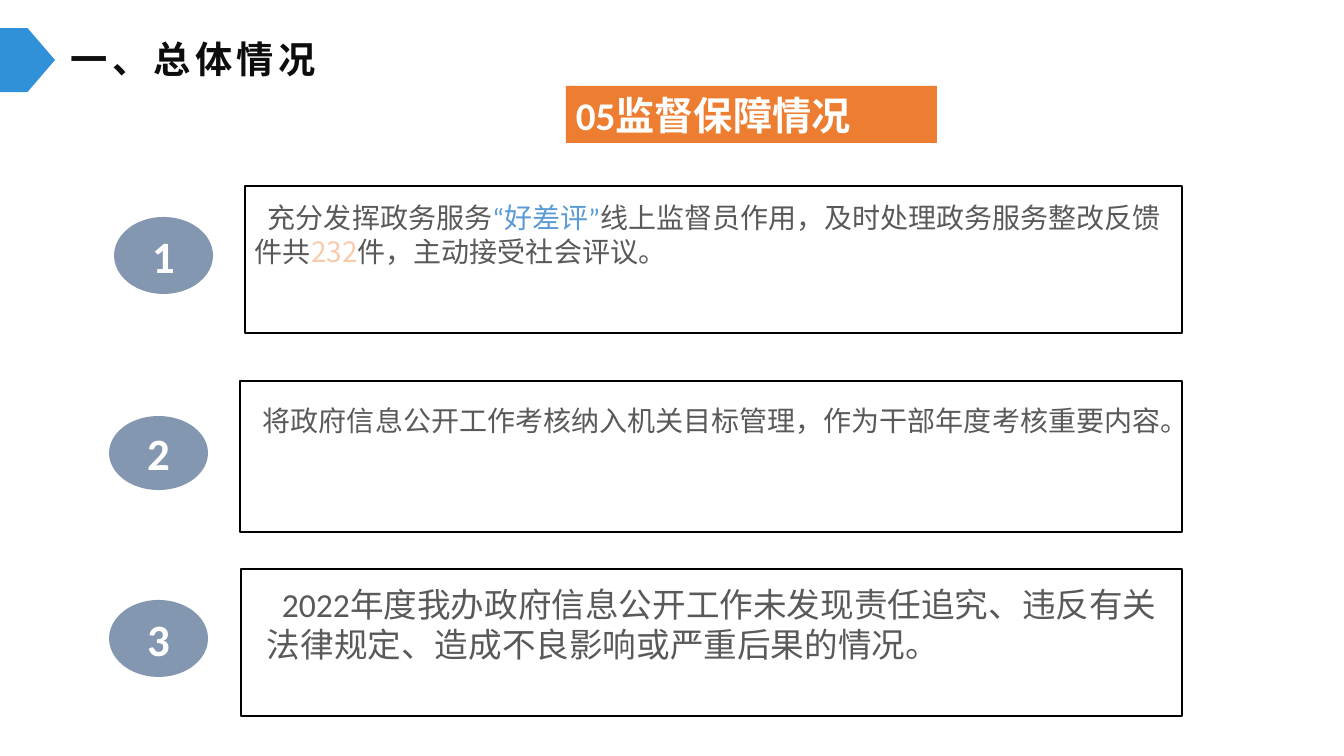
from dataclasses import dataclass

from pptx import Presentation
from pptx.dml.color import RGBColor
from pptx.enum.shapes import MSO_SHAPE
from pptx.enum.text import MSO_ANCHOR, PP_ALIGN
from pptx.oxml.ns import qn
from pptx.util import Pt

EMU_PER_PIXEL = 914400 / 100.8


@dataclass(frozen=True)
class Theme:
    body_font: str = "Calibri"
    accent_font: str = "Noto Sans CJK SC"
    white: str = "FFFFFF"
    black: str = "000000"
    title: str = "0D0D0D"
    tab: str = "3090D8"
    banner: str = "ED7D31"
    badge: str = "8497B0"
    body: str = "595959"
    praise: str = "5B9BD5"
    count: str = "F8CBAD"
    title_size: float = 26.6
    banner_size: int = 28
    badge_size: int = 32
    body_size: int = 20
    large_size: int = 24


THEME = Theme()


def px(length):
    return round(length * EMU_PER_PIXEL)


def add_block(page, kind, box, fill, line=None):
    block = page.shapes.add_shape(kind, *map(px, box))
    block.shadow.inherit = False
    block.fill.solid()
    block.fill.fore_color.rgb = RGBColor.from_string(fill)
    if line:
        block.line.color.rgb = RGBColor.from_string(line)
        block.line.width = Pt(2)
    else:
        block.line.fill.background()
    return block


def write(shape, spans, size, bold=False, align=PP_ALIGN.LEFT,
          anchor=MSO_ANCHOR.TOP, wrap=True):
    """Fill a shape with one paragraph of (text, colour, font) spans."""
    frame = shape.text_frame
    frame.word_wrap = wrap
    frame.vertical_anchor = anchor
    para = frame.paragraphs[0]
    para.alignment = align
    for text, colour, font in spans:
        span = para.add_run()
        span.text = text
        span.font.size = Pt(size)
        span.font.bold = bold
        span.font.name = font
        span.font.color.rgb = RGBColor.from_string(colour)
        properties = span.font._element
        east_asian = properties.makeelement(qn("a:ea"), {"typeface": font})
        properties.find(qn("a:latin")).addnext(east_asian)
    return para


def add_header(page, box):
    left, top, width, height = box
    # Pointed tab at the slide edge
    add_block(page, MSO_SHAPE.PENTAGON, (left, top, 55, height), THEME.tab)
    # Section title
    title = page.shapes.add_textbox(
        *map(px, (left + 61, top + 3, width - 61, 55)))
    para = write(title, [("一、总体情况", THEME.title, THEME.accent_font)],
                 THEME.title_size, bold=True, wrap=False)
    para.runs[0].font._element.set("spc", "300")


def add_banner(page, box):
    banner = add_block(page, MSO_SHAPE.RECTANGLE, box, THEME.banner)
    write(banner, [("05监督保障情况", THEME.white, THEME.body_font)],
          THEME.banner_size, bold=True)


def add_item(page, box, number, badge_box, text_box, spans, size, indent):
    """Place a framed statement; badge and text offsets are from the frame."""
    left, top = box[:2]
    # Frame
    add_block(page, MSO_SHAPE.RECTANGLE, box, THEME.white, THEME.black)
    # Numbered badge
    across, down, width, height = badge_box
    badge = add_block(page, MSO_SHAPE.OVAL,
                      (left + across, top + down, width, height), THEME.badge)
    write(badge, [(str(number), THEME.white, THEME.body_font)],
          THEME.badge_size, bold=True, align=PP_ALIGN.CENTER,
          anchor=MSO_ANCHOR.MIDDLE)
    # Statement
    across, down, width, height = text_box
    statement = page.shapes.add_textbox(
        *map(px, (left + across, top + down, width, height)))
    para = write(statement, spans, size)
    para.space_after = Pt(6)
    para._p.get_or_add_pPr().set("indent", str(px(indent)))


def plain(text):
    return text, THEME.body, THEME.body_font


# Frame, badge, text box, spans, type size, first-line indent
ITEMS = [
    ((245, 186, 937, 147), (-131, 31, 99, 77), (0, 10, 936, 77),
     [plain("充分发挥政务服务"),
      ("“好差评”", THEME.praise, THEME.body_font),
      plain("线上监督员作用，及时处理政务服务整改反馈件共"),
      ("232", THEME.count, THEME.accent_font),
      plain("件，主动接受社会评议。")],
     THEME.body_size, 13),
    ((240, 381, 942, 151), (-131, 35, 99, 74), (7, 18, 936, 44),
     [plain("将政府信息公开工作考核纳入机关目标管理，作为干部年度考核重要内容。")],
     THEME.body_size, 6),
    ((241, 569, 941, 147), (-132, 31, 99, 77), (16, 10, 910, 92),
     [plain("2022年度我办政府信息公开工作未发现责任追究、违反有关法律规定、"
            "造成不良影响或严重后果的情况。")],
     THEME.large_size, 15),
]


def main():
    deck = Presentation()
    deck.slide_width = px(1344)
    deck.slide_height = px(756)
    page = deck.slides.add_slide(deck.slide_layouts[6])
    add_header(page, (0, 28, 332, 64))
    add_banner(page, (566, 86, 371, 57))
    for number, (box, *parts) in enumerate(ITEMS, start=1):
        add_item(page, box, number, *parts)
    deck.save("out.pptx")


if __name__ == "__main__":
    main()
